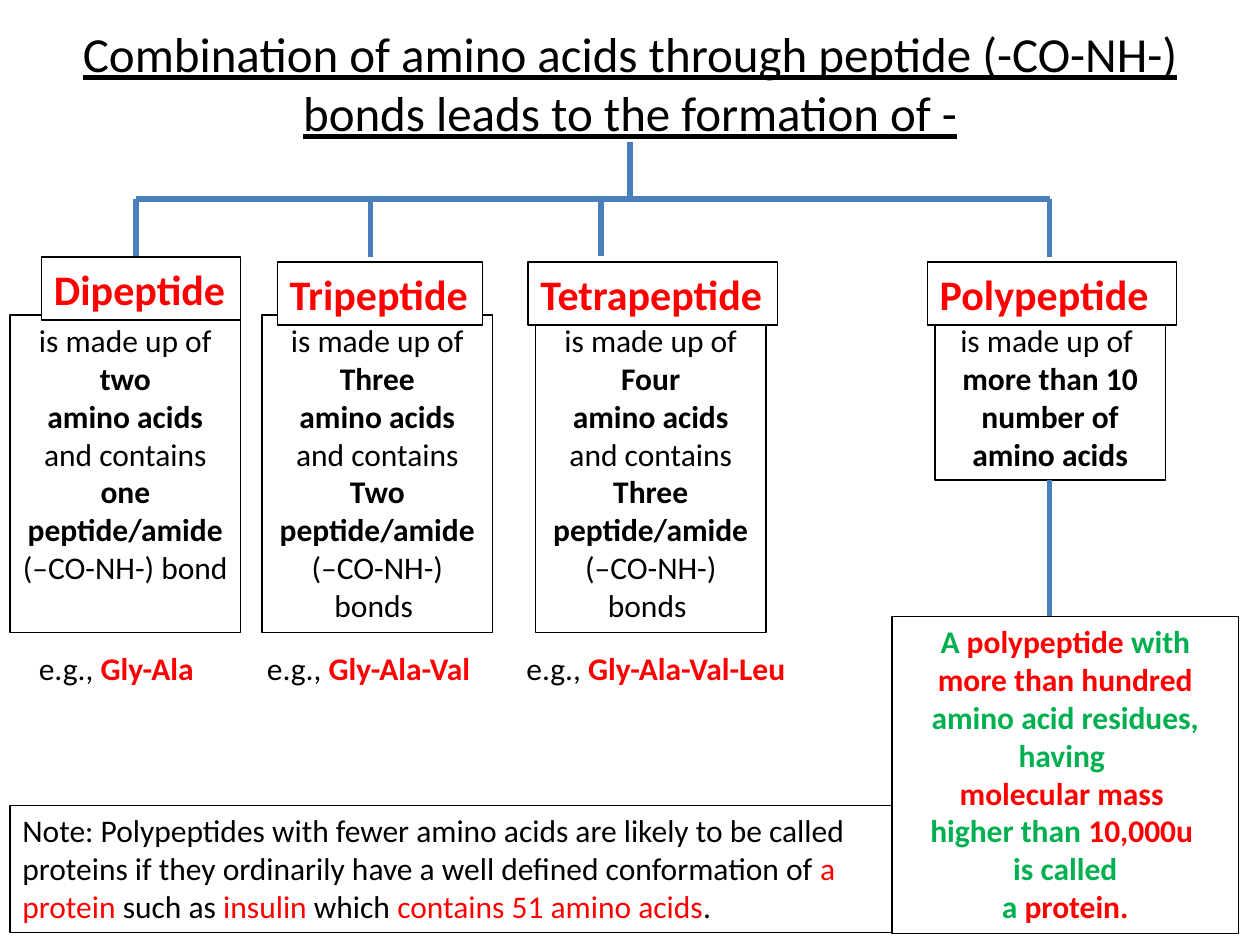
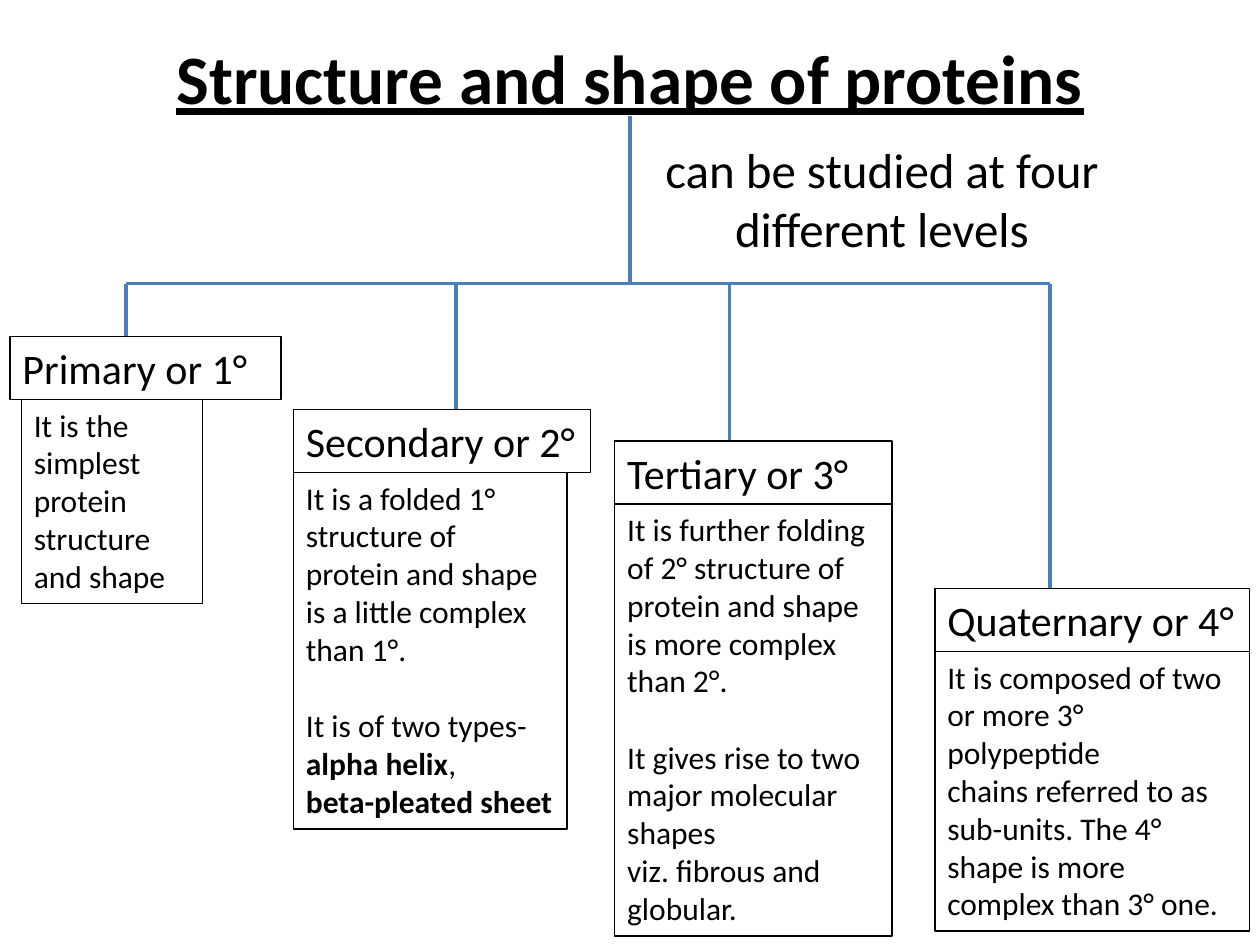
import dataclasses

import pptx
import pptx.dml.color
import pptx.enum.shapes
import pptx.enum.text
import pptx.oxml
import pptx.oxml.ns
import pptx.util
from pptx.util import Inches


def color(value):
    return pptx.dml.color.RGBColor.from_string(value)


@dataclasses.dataclass(frozen=True)
class Theme:
    font: str = "Calibri"
    black: str = "000000"
    white: str = "FFFFFF"
    red: str = "FF0000"
    green: str = "00B050"
    blue: str = "4B7EBC"
    body: float = 18
    heading: float = 24
    subtitle: float = 28
    main_title: float = 39.6
    border: float = 0.75


THEME = Theme()
ALIGN = pptx.enum.text.PP_ALIGN
STYLES = {
    "plain": (THEME.black, False),
    "bold": (THEME.black, True),
    "red": (THEME.red, False),
    "red bold": (THEME.red, True),
    "green bold": (THEME.green, True),
}


def format_run(run, size, style="plain", underline=None):
    ink, bold = STYLES[style]
    run.font.name = THEME.font
    run.font.size = pptx.util.Pt(size)
    run.font.color.rgb = color(ink)
    run.font.bold = bold
    run.font.underline = underline


def fill_paragraph(paragraph, pieces, size):
    if isinstance(pieces, str):
        pieces = [(pieces, "plain")]
    for text, style in pieces:
        run = paragraph.add_run()
        run.text = text
        format_run(run, size, style)


def add_title(slide, text, box, size, style="plain"):
    title = slide.shapes.title
    title.left, title.top, title.width, title.height = map(Inches, box)
    frame = title.text_frame
    frame.text = text
    frame.auto_size = pptx.enum.text.MSO_AUTO_SIZE.NONE
    frame.vertical_anchor = pptx.enum.text.MSO_ANCHOR.MIDDLE
    paragraph = frame.paragraphs[0]
    paragraph.alignment = ALIGN.CENTER
    format_run(paragraph.runs[0], size, style, underline=True)


def add_text(slide, box, paragraphs, size=THEME.body, align=ALIGN.LEFT,
             boxed=True, filled=False, gap_before=None):
    shape = slide.shapes.add_textbox(*map(Inches, box))
    frame = shape.text_frame
    frame.word_wrap = True
    if boxed:
        shape.line.color.rgb = color(THEME.black)
        shape.line.width = pptx.util.Pt(THEME.border)
    if filled:
        shape.fill.solid()
        shape.fill.fore_color.rgb = color(THEME.white)
    for index, pieces in enumerate(paragraphs):
        paragraph = frame.add_paragraph() if index else frame.paragraphs[0]
        paragraph.alignment = align
        if index == gap_before:
            paragraph.space_before = pptx.util.Pt(22)
        fill_paragraph(paragraph, pieces, size)
    return shape


def add_label(slide, box, pieces, **options):
    label = add_text(slide, box, [pieces], **options)
    label.text_frame.margin_right = 0


def add_line(slide, start, end, width):
    line = slide.shapes.add_connector(
        pptx.enum.shapes.MSO_CONNECTOR.STRAIGHT, *map(Inches, start + end))
    line.line.color.rgb = color(THEME.blue)
    line.line.width = pptx.util.Pt(width)
    properties = line._element.spPr
    properties.append(pptx.oxml.parse_xml(
        f"<a:effectLst {pptx.oxml.ns.nsdecls('a')}/>"))


def add_tree(slide, trunk_top, bar_top, branches, width, trunk_x=5):
    add_line(slide, (trunk_x, trunk_top), (trunk_x, bar_top), width)
    add_line(slide, (branches[0][0], bar_top), (branches[-1][0], bar_top), width)
    for x, bottom in branches:
        add_line(slide, (x, bar_top), (x, bottom), width)


def add_peptide(slide, name, heading_box, left, paragraphs, height=2.52):
    add_text(slide, (left, 2.5, 1.83, height), paragraphs, align=ALIGN.CENTER)
    add_label(slide, heading_box, [(name, "red bold")],
              size=THEME.heading, filled=True)


def peptide_text(acids, bonds, bond_word):
    return [
        [("is made up of ", "plain"), (acids, "bold")],
        [("amino acids ", "bold"), ("and contains ", "plain"),
         (f"{bonds} peptide/amide ", "bold"),
         (f"(–CO-NH-) {bond_word} ", "plain")],
    ]


def add_level(slide, name, heading_box, body_box, paragraphs, gap_before=None):
    add_label(slide, heading_box, name, size=THEME.heading)
    add_text(slide, body_box, paragraphs, gap_before=gap_before)


def build_peptides(slide):
    add_title(slide, "Combination of amino acids through peptide (-CO-NH-) "
              "bonds leads to the formation of -", (0.5, 0.17, 9, 0.97),
              THEME.subtitle)
    add_tree(slide, 1.13, 1.58,
             [(1.08, 2.03), (2.94, 2.04), (4.77, 2.03), (8.33, 2.04)], 3)

    peptides = [
        ("Dipeptide", (0.33, 2.04, 1.58, 0.5), 0.08, ("two", "one", "bond"),
         "Gly-Ala", 0.21, 1.45),
        ("Tripeptide", (2.2, 2.08, 1.63, 0.5), 2.08, ("Three", "Two", "bonds"),
         "Gly-Ala-Val", 2.02, 1.85),
        ("Tetrapeptide", (4.19, 2.08, 1.98, 0.5), 4.25, ("Four", "Three", "bonds"),
         "Gly-Ala-Val-Leu", 4.08, 2.3),
    ]
    for name, heading_box, left, words, example, example_left, width in peptides:
        add_peptide(slide, name, heading_box, left, peptide_text(*words))
        add_label(slide, (example_left, 5.1, width, 0.4),
                  [("e.g., ", "plain"), (example, "red bold")], boxed=False)

    add_peptide(slide, "Polypeptide", (7.36, 2.08, 1.98, 0.5), 7.42, [
        "is made up of ",
        [("more than 10 number of", "bold")],
        [("amino acids", "bold")],
    ], height=1.31)
    add_line(slide, (8.33, 3.81), (8.33, 4.89), 3)

    add_text(slide, (0.08, 6.39, 7.17, 1.01), [
        "Note: Polypeptides with fewer amino acids are likely to be called",
        [("proteins if they ordinarily have a well defined conformation of ", "plain"),
         ("a protein ", "red"), ("such as ", "plain"), ("insulin", "red"),
         (" which ", "plain"), ("contains 51 amino acids", "red"), (".", "plain")],
    ], filled=True)
    add_text(slide, (7.08, 4.89, 2.75, 2.52), [
        [("A ", "green bold"), ("polypeptide", "red bold"),
         (" with ", "green bold"), ("more than hundred", "red bold")],
        [("amino acid residues, having ", "green bold")],
        [("molecular mass ", "red bold")],
        [("higher than ", "green bold"), ("10,000u ", "red bold")],
        [("is called", "green bold")],
        [("a", "green bold"), (" protein.", "red bold")],
    ], align=ALIGN.CENTER, filled=True)


def build_protein_levels(slide):
    add_title(slide, "Structure and shape of proteins", (0.5, 0.3, 9, 0.62),
              THEME.main_title, "bold")
    add_text(slide, (5.17, 1.06, 3.66, 1.04),
             ["can be studied at four different levels"],
             size=THEME.subtitle, align=ALIGN.CENTER, boxed=False)
    add_tree(slide, 0.92, 2.25,
             [(1, 2.67), (3.62, 3.25), (5.79, 3.5), (8.33, 4.67)], 2.25)

    add_level(slide, "Primary or 1°", (0.08, 2.67, 2.15, 0.5),
              (0.17, 3.17, 1.44, 1.62),
              ["It is the simplest protein structure and shape"])
    add_level(slide, "Secondary or 2°", (2.33, 3.25, 2.36, 0.5),
              (2.33, 3.75, 2.17, 2.83), [
                  "It is a folded 1° structure of protein and shape "
                  "is a little complex than 1°.",
                  "It is of two types-",
                  [("alpha helix", "bold"), (",", "plain")],
                  [("beta-pleated sheet", "bold")],
              ], gap_before=1)
    add_level(slide, "Tertiary or 3°", (4.88, 3.5, 2.2, 0.5),
              (4.88, 4, 2.2, 3.43), [
                  "It is further folding of 2° structure of protein and shape "
                  "is more complex than 2°.",
                  "It gives rise to two major molecular shapes",
                  "viz. fibrous and globular.",
              ], gap_before=1)
    add_level(slide, "Quaternary or 4°", (7.42, 4.67, 2.5, 0.5),
              (7.42, 5.17, 2.5, 2.22), [
                  "It is composed of two or more 3° polypeptide",
                  "chains referred to as sub-units. The 4° shape is more "
                  "complex than 3° one.",
              ])


def main():
    presentation = pptx.Presentation()
    presentation.slide_width = Inches(10)
    presentation.slide_height = Inches(7.5)
    title_only = presentation.slide_layouts[5]
    for build in (build_peptides, build_protein_levels):
        build(presentation.slides.add_slide(title_only))
    presentation.save("out.pptx")


if __name__ == "__main__":
    main()
